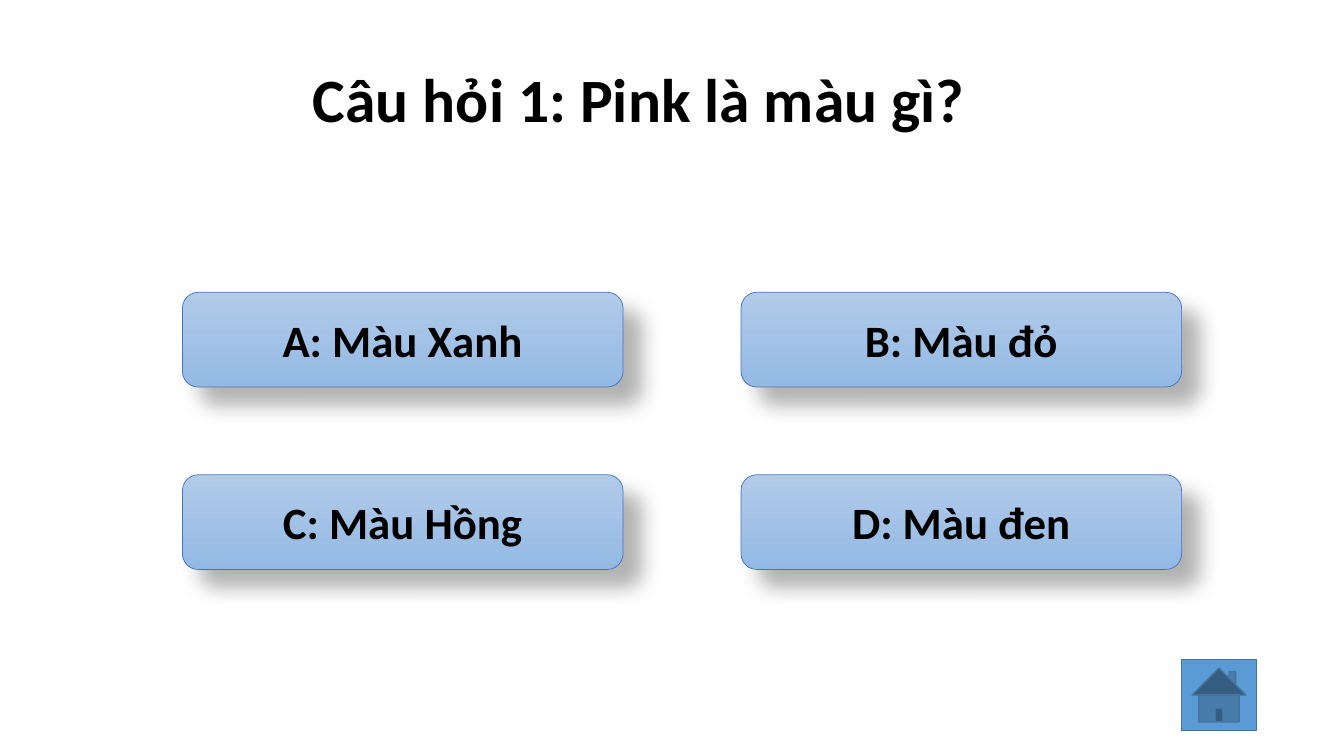
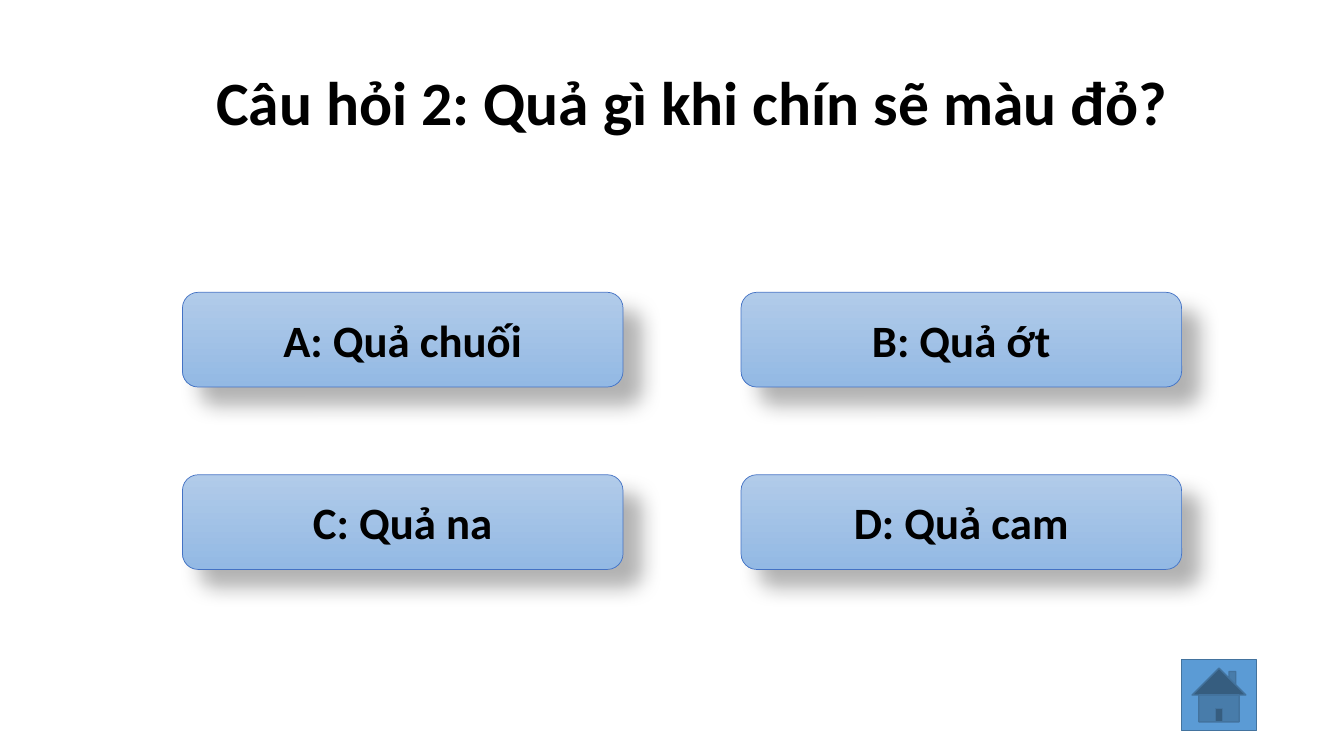
import pptx
import pptx.util
import pptx.dml.color
import pptx.enum.shapes
import pptx.enum.text
import pptx.oxml
import pptx.oxml.ns

Inches = pptx.util.Inches
Pt = pptx.util.Pt
SHAPE = pptx.enum.shapes.MSO_SHAPE

FONT = "Calibri"
INK = "000000"
TOP, BASE, EDGE = "B1CBE9", "93B9E4", "4472C4"
HOME, TRIM = "5B9BD5", "43739E"

QUIZ = [
    ("Câu hỏi 1: Pink là màu gì?", (0.59, 0.29),
     ["A: Màu Xanh", "B: Màu đỏ", "C: Màu Hồng", "D: Màu đen"]),
    ("Câu hỏi 2: Quả gì khi chín sẽ màu đỏ?", (1.12, 0.32),
     ["A: Quả chuối", "B: Quả ớt", "C: Quả na", "D: Quả cam"]),
]


def color(code):
    return pptx.dml.color.RGBColor.from_string(code)


def write(shape, text, size, space=1.0):
    frame = shape.text_frame
    frame.text = text
    frame.word_wrap = True
    frame.vertical_anchor = pptx.enum.text.MSO_ANCHOR.MIDDLE
    line = frame.paragraphs[0]
    line.alignment = pptx.enum.text.PP_ALIGN.CENTER
    line.line_spacing = space
    font = line.runs[0].font
    font.name = FONT
    font.size = Pt(size)
    font.bold = True
    font.color.rgb = color(INK)


def add_form(slide, kind, box, edge, width):
    shape = slide.shapes.add_shape(kind, *map(Inches, box))
    shape.shadow.inherit = False
    shape.line.color.rgb = color(edge)
    shape.line.width = Pt(width)
    return shape


def add_shade(shape):
    space = pptx.oxml.ns.nsdecls("a")
    shade = pptx.oxml.parse_xml(
        f'<a:outerShdw {space} blurRad="{Pt(15)}" dist="{Pt(18)}" '
        f'dir="{45 * 60000}" algn="tl" rotWithShape="0">'
        f'<a:srgbClr val="{INK}"><a:alpha val="30000"/></a:srgbClr>'
        '</a:outerShdw>')
    props = shape._element.spPr
    props.find(pptx.oxml.ns.qn("a:effectLst")).append(shade)


def add_title(slide, text, box):
    write(slide.shapes.add_textbox(*map(Inches, box)), text, 44, 0.9)


def add_card(slide, text, box):
    card = add_form(slide, SHAPE.ROUNDED_RECTANGLE, box, EDGE, 0.5)
    card.fill.gradient()
    card.fill.gradient_angle = 270
    for stop, code in zip(card.fill.gradient_stops, (TOP, BASE)):
        stop.color.rgb = color(code)
    add_shade(card)
    write(card, text, 32)


def add_grid(slide, texts, box):
    left, top, width, height = box
    wide, high = 4.37, 0.94
    for index, text in enumerate(texts):
        row, col = divmod(index, 2)
        x = left + col * (width - wide)
        y = top + row * (height - high)
        add_card(slide, text, (x, y, wide, high))


def add_home(slide, box):
    home = add_form(slide, SHAPE.ACTION_BUTTON_HOME, box, TRIM, 1)
    home.fill.solid()
    home.fill.fore_color.rgb = color(HOME)


def add_quiz(deck, title, place, texts):
    slide = deck.slides.add_slide(deck.slide_layouts[6])
    add_title(slide, title, (*place, 11.5, 1.45))
    add_grid(slide, texts, (1.81, 2.9, 9.91, 2.75))
    add_home(slide, (11.72, 6.54, 0.74, 0.71))


def main():
    deck = pptx.Presentation()
    deck.slide_width = Inches(13.33)
    deck.slide_height = Inches(7.5)
    for title, place, texts in QUIZ:
        add_quiz(deck, title, place, texts)
    deck.save("out.pptx")


if __name__ == "__main__":
    main()
